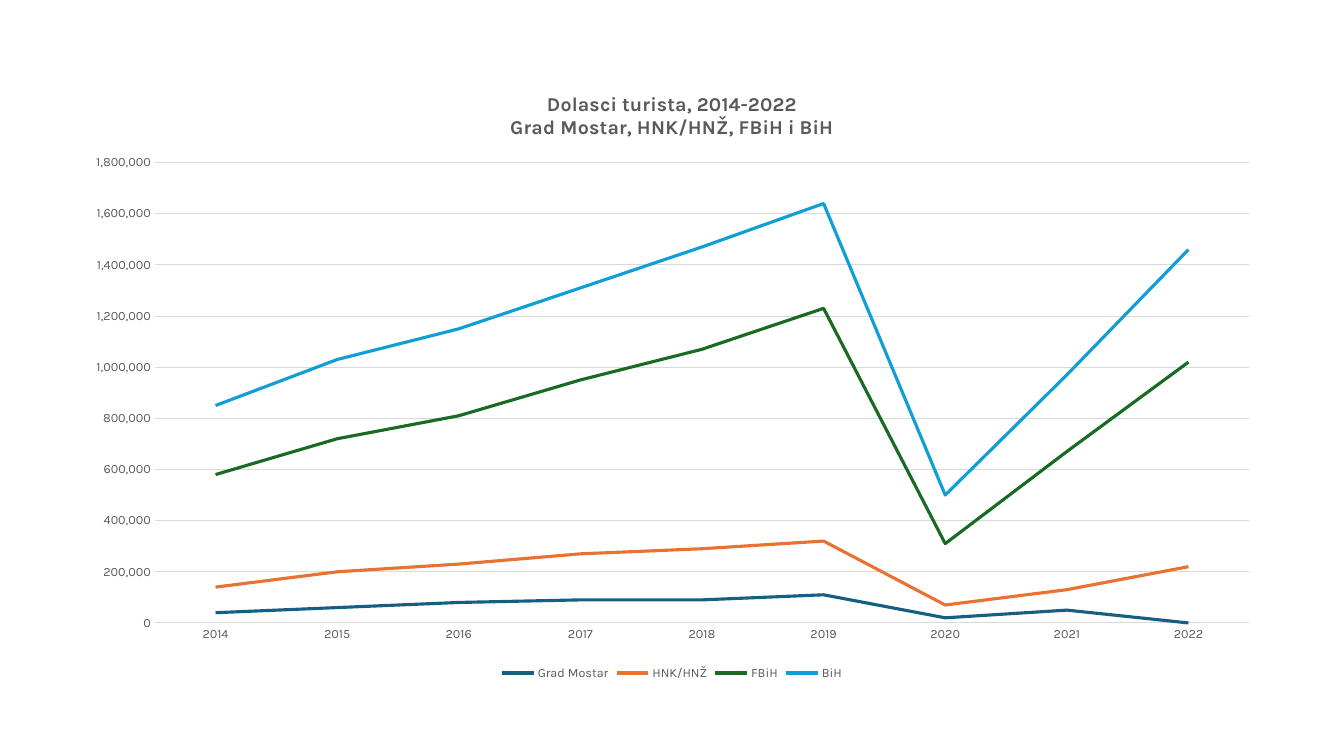
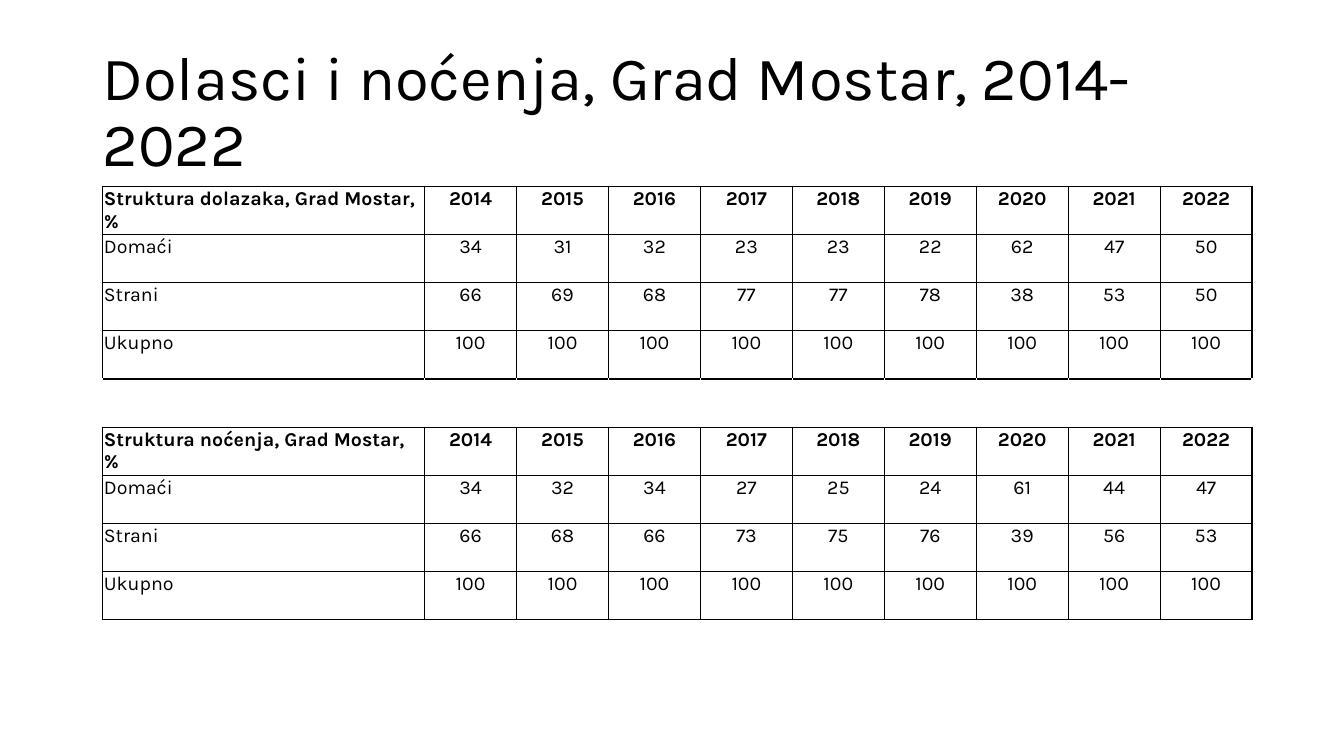
from lxml import etree
from pptx import Presentation
from pptx import util as u
from pptx.chart.data import CategoryChartData
from pptx.dml.color import RGBColor
from pptx.enum import chart as ch, text
from pptx.oxml import parse_xml
from pptx.oxml.ns import nsdecls

BLACK = RGBColor(0x00, 0x00, 0x00)
WHITE = RGBColor(0xFF, 0xFF, 0xFF)
GREY = RGBColor(0x59, 0x59, 0x59)
GRID = RGBColor(0xD9, 0xD9, 0xD9)
NAVY = RGBColor(0x15, 0x60, 0x82)
ORANGE = RGBColor(0xE9, 0x71, 0x32)
GREEN = RGBColor(0x19, 0x6B, 0x24)
BLUE = RGBColor(0x0F, 0x9E, 0xD5)
FONT = "Karla"

YEARS = [str(y) for y in range(2014, 2023)]
# Arrivals in thousands
ARRIVALS = [
    ("Grad Mostar", NAVY, [40, 60, 80, 90, 90, 110, 20, 50, 0]),
    ("HNK/HNŽ", ORANGE, [140, 200, 230, 270, 290, 320, 70, 130, 220]),
    ("FBiH", GREEN, [580, 720, 810, 950, 1070, 1230, 310, 670, 1020]),
    ("BiH", BLUE, [850, 1030, 1150, 1310, 1470, 1640, 500, 970, 1460]),
]
# Domestic share in percent; the foreign share is the remainder
SHARES = [
    ("Struktura dolazaka, Grad Mostar, %", [34, 31, 32, 23, 23, 22, 62, 47, 50]),
    ("Struktura noćenja, Grad Mostar, %", [34, 32, 34, 27, 25, 24, 61, 44, 47]),
]


def style(font, size, color, bold=False):
    font.name, font.size, font.bold = FONT, u.Pt(size), bold
    font.color.rgb = color


def add_run(p, words, size, color, bold=False):
    r = p.add_run()
    r.text = words
    style(r.font, size, color, bold)


def set_line(line, color, width):
    line.color.rgb = color
    line.width = u.Pt(width)


def set_plot_area(chart, x, y, w, h):
    """Fix the inner plot area, in shares of the chart's size."""
    plot_area = chart._chartSpace.chart.plotArea
    for old in plot_area.xpath("c:layout"):
        plot_area.remove(old)
    sizes = "".join(f'<c:{tag} val="{val}"/>' for tag, val in
                    (("x", x), ("y", y), ("w", w), ("h", h)))
    plot_area.insert(0, parse_xml(
        f'<c:layout {nsdecls("c")}><c:manualLayout>'
        '<c:layoutTarget val="inner"/><c:xMode val="edge"/><c:yMode val="edge"/>'
        f'{sizes}</c:manualLayout></c:layout>'))


def style_axis(axis):
    axis.major_tick_mark = axis.minor_tick_mark = ch.XL_TICK_MARK.NONE
    style(axis.tick_labels.font, 9, GREY)


def arrivals_chart(s, x, y, w, h):
    data = CategoryChartData(number_format="#,##0")
    data.categories = YEARS
    for name, _, thousands in ARRIVALS:
        data.add_series(name, [v * 1000 for v in thousands])
    chart = s.shapes.add_chart(ch.XL_CHART_TYPE.LINE, x, y, w, h, data).chart
    style(chart.font, 10, BLACK)

    chart.has_title = True
    tf = chart.chart_title.text_frame
    add_run(tf.paragraphs[0], "Dolasci turista, 2014-2022", 14, GREY, True)
    add_run(tf.add_paragraph(), "Grad Mostar, HNK/HNŽ, FBiH i BiH", 14, GREY, True)
    chart.chart_title.include_in_layout = False

    chart.has_legend = True
    chart.legend.position = ch.XL_LEGEND_POSITION.BOTTOM
    chart.legend.include_in_layout = False
    style(chart.legend.font, 9, GREY)

    years, values = chart.category_axis, chart.value_axis
    style_axis(years)
    style_axis(values)
    set_line(years.format.line, GRID, 0.75)
    values.format.line.fill.background()
    set_line(values.major_gridlines.format.line, GRID, 0.75)
    values.minimum_scale, values.maximum_scale = 0, 1800000
    values.major_unit = 200000
    values.tick_labels.number_format = "#,##0"
    values.tick_labels.number_format_is_linked = False

    plot = chart.plots[0]
    plot.vary_by_categories = False
    for series, (_, color, _) in zip(plot.series, ARRIVALS):
        series.smooth = False
        series.marker.style = ch.XL_MARKER_STYLE.NONE
        set_line(series.format.line, color, 2.25)
    set_plot_area(chart, 0.07, 0.15, 0.91, 0.75)


def slide_title(s, words, x, y, w, h):
    tf = s.shapes.add_textbox(x, y, w, h).text_frame
    tf.word_wrap = True
    tf.vertical_anchor = text.MSO_ANCHOR.MIDDLE
    p = tf.paragraphs[0]
    p.line_spacing = 0.9
    add_run(p, words, 44, BLACK)


def set_borders(cell, sides, rows):
    """Draw 1 pt borders: one colour left and right, one above and below."""
    tc_pr = cell._tc.get_or_add_tcPr()
    for i, (side, color) in enumerate(zip("LRTB", (sides, sides, rows, rows))):
        ln = parse_xml(f'<a:ln{side} {nsdecls("a")} w="12700"/>')
        fill = etree.SubElement(ln, "{%s}solidFill" % ln.nsmap["a"])
        etree.SubElement(fill, "{%s}srgbClr" % ln.nsmap["a"], val=str(color))
        tc_pr.insert(i, ln)


def share_rows():
    """Return the two blocks of rows, with an empty row between them."""
    blocks = []
    for heading, domestic in SHARES:
        blocks.append([
            [heading] + YEARS,
            ["Domaći"] + domestic,
            ["Strani"] + [100 - v for v in domestic],
            ["Ukupno"] + [100] * len(YEARS),
        ])
    gap = [""] * (len(YEARS) + 1)
    return blocks[0] + [gap] + blocks[1]


def shares_table(s, x, y, w, h):
    rows = share_rows()
    table = s.shapes.add_table(len(rows), len(rows[0]), x, y, w, h).table
    table.first_row = table.horz_banding = False
    label_width = int(w * 0.28)
    for i, col in enumerate(table.columns):
        col.width = label_width if i == 0 else (w - label_width) // len(YEARS)
    for row, values in zip(table.rows, rows):
        row.height = h // len(rows)
        is_gap = not values[0]
        is_header = values[0] in dict(SHARES)
        for i, (cell, value) in enumerate(zip(row.cells, values)):
            cell.fill.background()
            set_borders(cell, WHITE if is_gap else BLACK, BLACK)
            if is_gap:
                continue
            cell.margin_left = cell.margin_right = cell.margin_top = u.Inches(0.01)
            cell.margin_bottom = 0
            p = cell.text_frame.paragraphs[0]
            if i:
                p.alignment = text.PP_ALIGN.CENTER
            add_run(p, str(value), 14, BLACK, is_header)


def main():
    prs = Presentation()
    prs.slide_width, prs.slide_height = u.Inches(13.33), u.Inches(7.5)
    blank = prs.slide_layouts[6]

    s = prs.slides.add_slide(blank)
    arrivals_chart(s, *map(u.Inches, (0.7, 0.7, 11.93, 6.09)))

    s = prs.slides.add_slide(blank)
    slide_title(s, "Dolasci i noćenja, Grad Mostar, 2014-2022",
                *map(u.Inches, (0.92, 0.4, 11.5, 1.45)))
    shares_table(s, *map(u.Inches, (1.02, 1.85, 11.4, 4.3)))
    prs.save("out.pptx")


if __name__ == "__main__":
    main()
